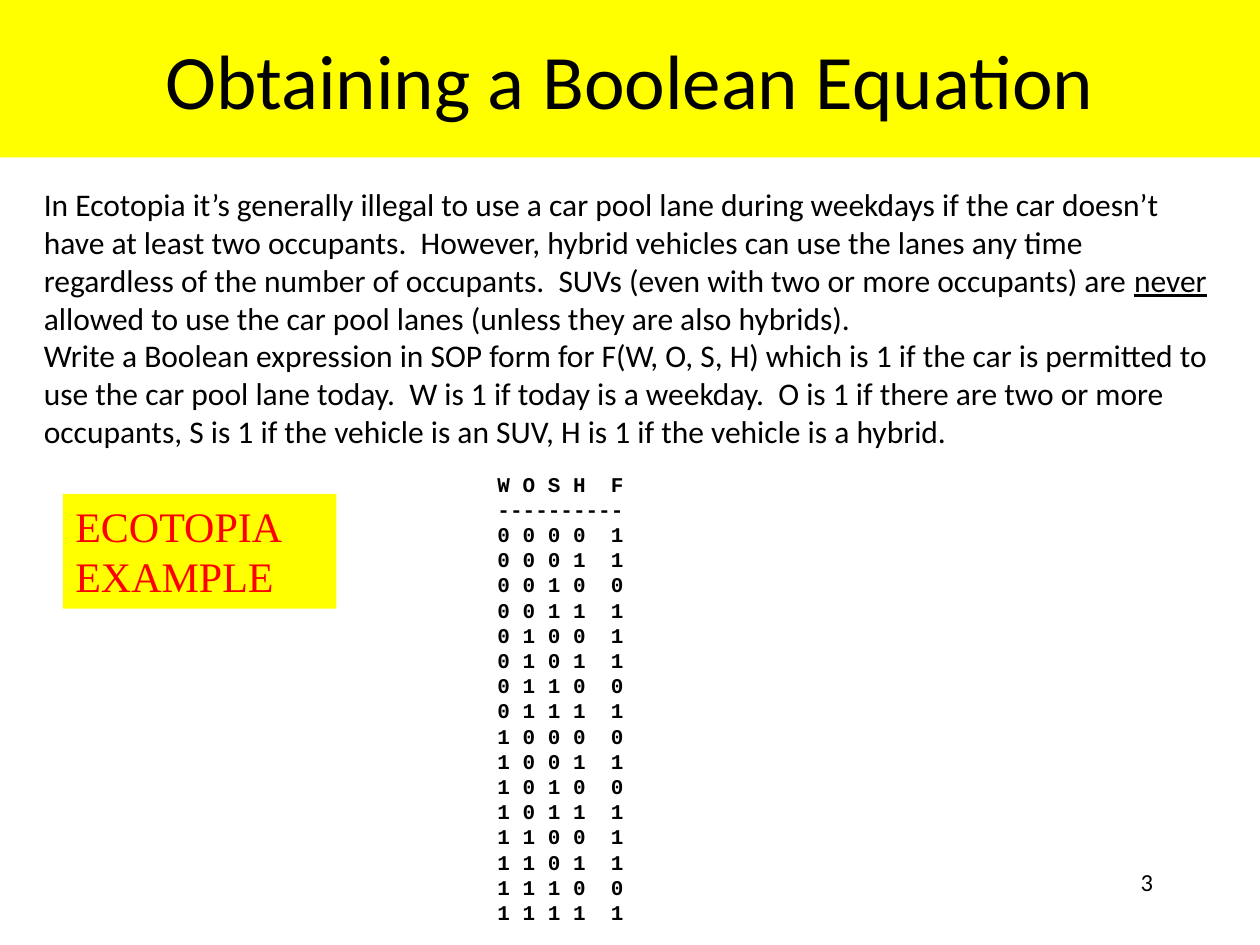
from dataclasses import dataclass
from itertools import product

from pptx import Presentation
from pptx.dml.color import RGBColor
from pptx.enum.text import MSO_ANCHOR as Anchor, MSO_AUTO_SIZE as AutoSize, PP_ALIGN as Align
from pptx.util import Inches, Pt

COLORS = {"band": "FFFF00", "text": "000000", "accent": "FF0000"}


@dataclass
class Style:
    font: str
    size: float
    color: str = "text"
    bold: bool = False
    align: Align = Align.LEFT
    anchor: Anchor = Anchor.TOP


@dataclass
class Block:
    left: float
    top: float
    width: float
    height: float
    lines: list[str]
    style: Style
    fill: str | None = None


def place(sp, b: Block) -> None:
    """Position a shape, fill it and write its lines; _word_ is underlined."""
    sp.left, sp.top = Inches(b.left), Inches(b.top)
    sp.width, sp.height = Inches(b.width), Inches(b.height)
    if b.fill:
        sp.fill.solid()
        sp.fill.fore_color.rgb = RGBColor.from_string(COLORS[b.fill])
    tf = sp.text_frame
    tf.word_wrap = True
    tf.auto_size = AutoSize.NONE
    tf.vertical_anchor = b.style.anchor
    for i, line in enumerate(b.lines):
        p = tf.add_paragraph() if i else tf.paragraphs[0]
        p.alignment = b.style.align
        p.font.name = b.style.font
        p.font.size = Pt(b.style.size)
        p.font.bold = b.style.bold
        p.font.color.rgb = RGBColor.from_string(COLORS[b.style.color])
        for j, part in enumerate(line.split("_")):
            r = p.add_run()
            r.text = part
            if j % 2:
                r.font.underline = True


def truth_table() -> list[str]:
    """List F for every input: hybrids always, others unless SUV or alone on a weekday."""
    lines = [" W O S H\tF", " " + "-" * 10]
    for w, o, s, h in product((0, 1), repeat=4):
        f = int(h or (not s and (o or not w)))
        lines.append(f" {w} {o} {s} {h}  {f}")
    return lines


TITLE = Block(0, 0, 10, 1.25, ["Obtaining a Boolean Equation"],
              Style("Calibri", 44, align=Align.CENTER, anchor=Anchor.MIDDLE), "band")

PROBLEM = [
    "In Ecotopia it’s generally illegal to use a car pool lane during weekdays if the car "
    "doesn’t have at least two occupants.  However, hybrid vehicles can use the lanes any time "
    "regardless of the number of occupants.  SUVs (even with two or more occupants) are _never_ "
    "allowed to use the car pool lanes (unless they are also hybrids).",
    "Write a Boolean expression in SOP form for F(W, O, S, H) which is 1 if the car is permitted "
    "to use the car pool lane today.  W is 1 if today is a weekday.  O is 1 if there are two or "
    "more occupants, S is 1 if the vehicle is an SUV, H is 1 if the vehicle is a hybrid.",
]

BLOCKS = [
    # Slide number
    Block(7.17, 6.83, 2.08, 0.5, ["3"], Style("Calibri", 14, align=Align.RIGHT)),
    # Problem statement
    Block(0.25, 1.42, 9.5, 2.22, PROBLEM, Style("Calibri", 18)),
    # Truth table
    Block(3.75, 3.67, 1.58, 3.74, truth_table(),
          Style("Courier New", 12, bold=True, anchor=Anchor.MIDDLE)),
    # Example label
    Block(0.5, 3.92, 2.17, 0.91, ["ECOTOPIA EXAMPLE"],
          Style("Times New Roman", 24, "accent"), "band"),
]


def main() -> None:
    prs = Presentation()
    prs.slide_width, prs.slide_height = Inches(10), Inches(7.5)
    s = prs.slides.add_slide(prs.slide_layouts[5])
    place(s.shapes.title, TITLE)
    for b in BLOCKS:
        place(s.shapes.add_textbox(0, 0, 0, 0), b)
    prs.save("out.pptx")


if __name__ == "__main__":
    main()
